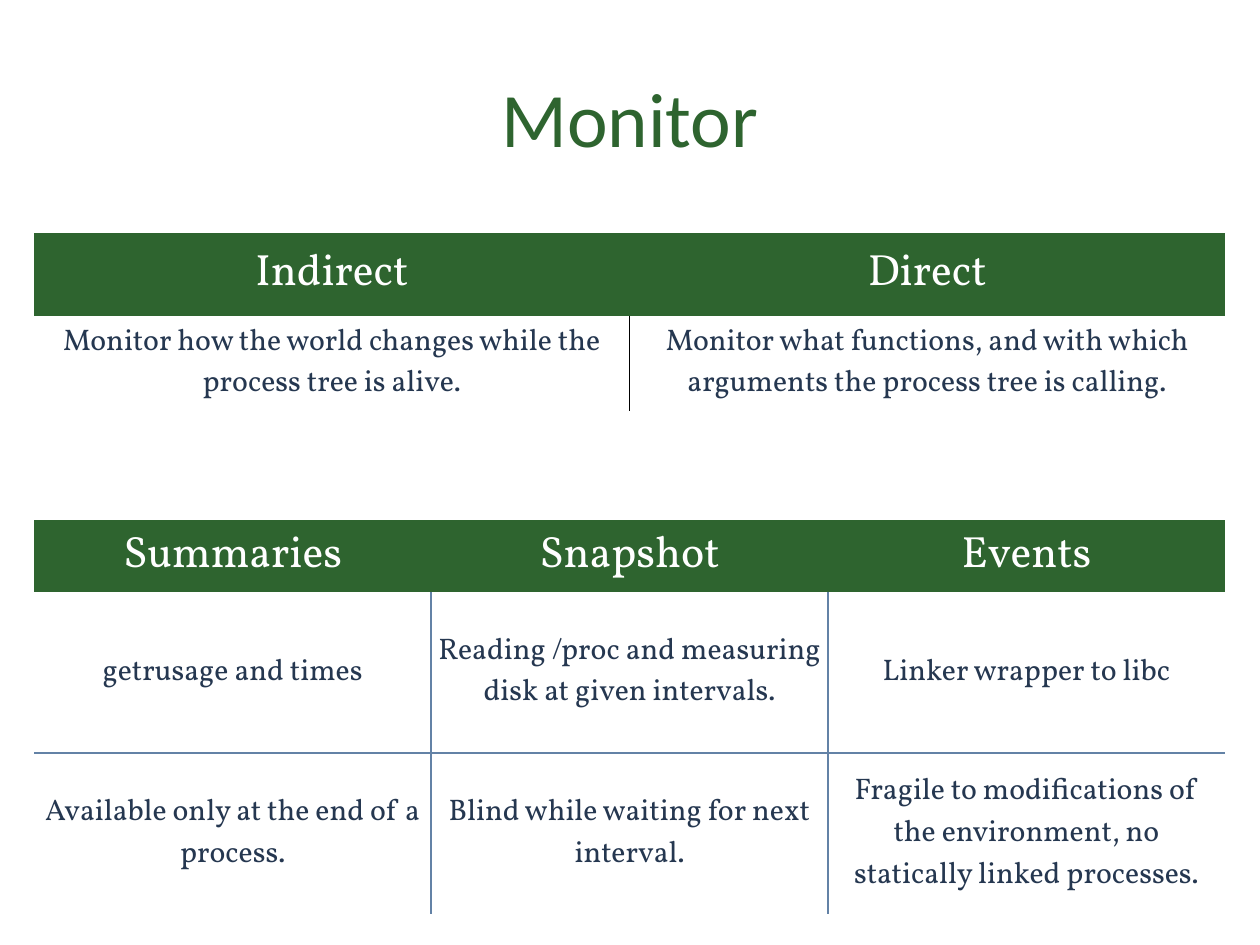
from lxml.etree import SubElement
from pptx import Presentation
from pptx.dml.color import RGBColor
from pptx.enum.text import MSO_ANCHOR, PP_ALIGN
from pptx.oxml.ns import qn
from pptx.util import Pt

GREEN, NAVY, WHITE = "2E642F", "253750", "FFFFFF"
BLUE, BLACK = "6382A6", "000000"
LEFT, WIDTH = 19.6, 680.4


def paint(color, code):
    color.rgb = RGBColor.from_string(code)


def style(frame, font, size, code):
    frame.vertical_anchor = MSO_ANCHOR.MIDDLE
    for para in frame.paragraphs:
        para.alignment = PP_ALIGN.CENTER
        for run in para.runs:
            run.font.name = font
            run.font.size = Pt(size)
            run.font.bold = False
            paint(run.font.color, code)


def add_title(slide, text):
    title = slide.shapes.title
    title.left, title.top = Pt(36), Pt(21.6)
    title.width, title.height = Pt(648), Pt(90)
    title.text_frame.text = text
    style(title.text_frame, "Calibri", 44, GREEN)


def set_edges(cell, edges, code):
    """Rule the sides named in edges; clear the others. Call before filling."""
    props = cell._tc.get_or_add_tcPr()
    for side in "LRTB":
        line = SubElement(props, qn(f"a:ln{side}"), w=str(Pt(1)))
        if side in edges:
            fill = SubElement(line, qn("a:solidFill"))
            SubElement(fill, qn("a:srgbClr"), val=code)
        else:
            SubElement(line, qn("a:noFill"))


def inner_edges(row, col, rows, cols):
    """Sides of a body cell that face another body cell."""
    tests = {"L": col > 0, "R": col < cols - 1,
             "T": row > 1, "B": row < rows - 1}
    return [side for side, shown in tests.items() if shown]


def add_grid(slide, top, heights, data, code):
    rows, cols = len(data), len(data[0])
    table = slide.shapes.add_table(rows, cols, Pt(LEFT), Pt(top),
                                   Pt(WIDTH), Pt(sum(heights))).table
    table.first_row = table.horz_banding = False
    for row, height in enumerate(heights):
        table.rows[row].height = Pt(height)
        for col, text in enumerate(data[row]):
            cell = table.cell(row, col)
            cell.text_frame.text = text
            cell.margin_left = cell.margin_right = Pt(2.9)
            cell.margin_top = cell.margin_bottom = Pt(2.9)
            cell.vertical_anchor = MSO_ANCHOR.MIDDLE
            if row == 0:
                set_edges(cell, [], code)
                cell.fill.solid()
                paint(cell.fill.fore_color, GREEN)
                style(cell.text_frame, "Vollkorn", 25, WHITE)
            else:
                set_edges(cell, inner_edges(row, col, rows, cols), code)
                cell.fill.background()
                style(cell.text_frame, "Vollkorn", 17, NAVY)


def main():
    deck = Presentation()
    deck.slide_width, deck.slide_height = Pt(720), Pt(540)
    slide = deck.slides.add_slide(deck.slide_layouts[5])
    add_title(slide, "Monitor")
    add_grid(slide, 297.2, [41, 92.2, 92.2], [
        ["Summaries", "Snapshot", "Events"],
        ["getrusage and times",
         "Reading /proc and measuring disk at given intervals.",
         "Linker wrapper to libc"],
        ["Available only at the end of a process.",
         "Blind while waiting for next interval.",
         "Fragile to modifications of the environment, "
         "no statically linked processes."],
    ], BLUE)
    add_grid(slide, 133.2, [47.5, 54], [
        ["Indirect", "Direct"],
        ["Monitor how the world changes while the process tree is alive.",
         "Monitor what functions, and with which arguments "
         "the process tree is calling."],
    ], BLACK)
    deck.save("out.pptx")


if __name__ == "__main__":
    main()
